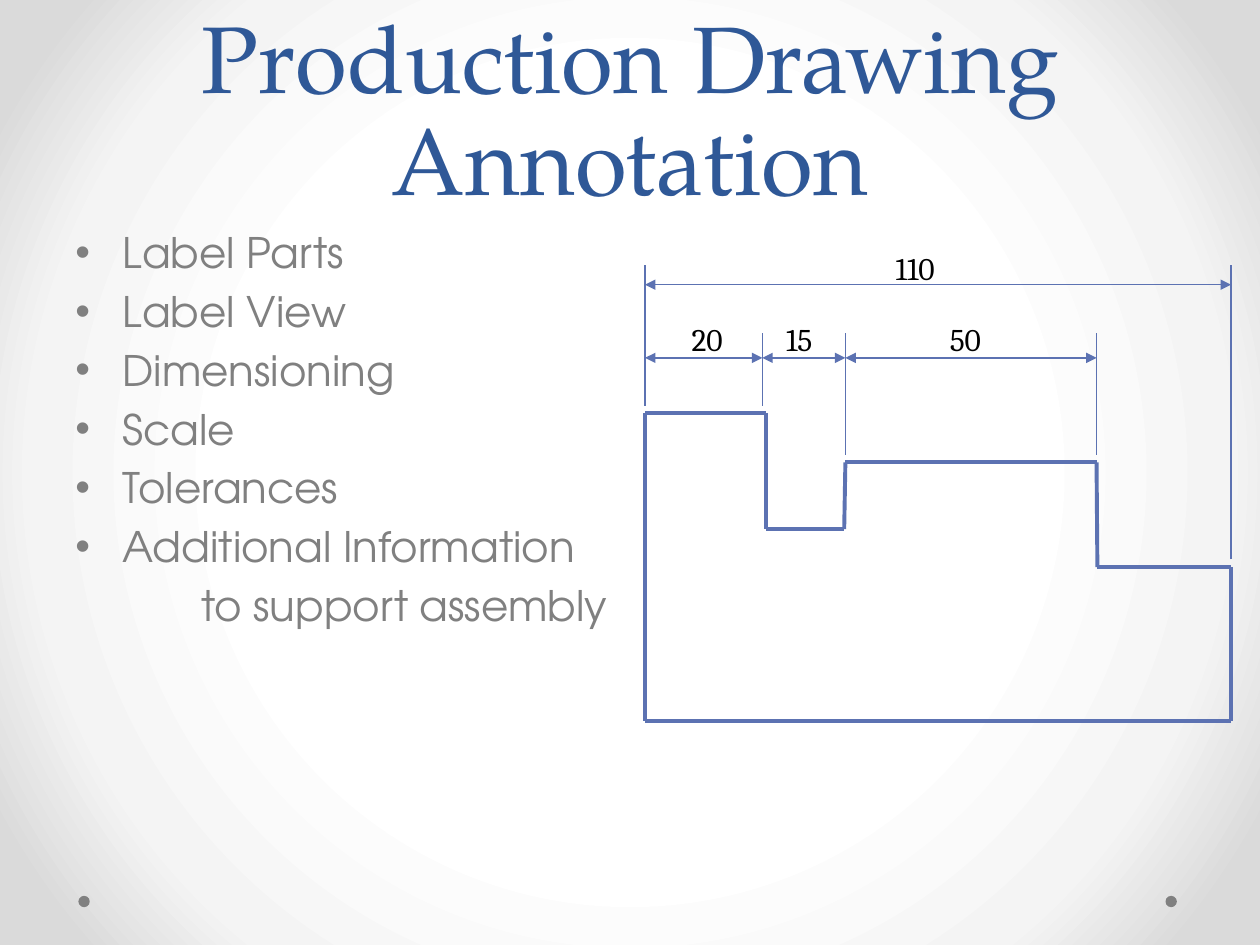
from itertools import pairwise

from pptx import Presentation
from pptx.dml.color import RGBColor
from pptx.enum.shapes import MSO_CONNECTOR as Connector, MSO_SHAPE as Preset
from pptx.enum.text import MSO_ANCHOR as Anchor, PP_ALIGN as Align
from pptx.oxml import parse_xml
from pptx.oxml.ns import nsdecls, qn
from pptx.util import Pt

COLORS = {
    "title": "2F5897",
    "body": "808080",
    "drawing": "5C72B2",
    "label": "000000",
}
BACKDROP = {50: "FFFFFF", 76: "F4F4F4", 92: "DADADA"}
FONTS = {
    "title": {"name": "TeX Gyre Pagella", "size": Pt(54)},
    "body": {"name": "TeX Gyre Adventor", "size": Pt(24)},
    "label": {"name": "Cambria", "size": Pt(18)},
}
PARAGRAPHS = {
    "title": {"alignment": Align.CENTER, "line_spacing": Pt(58)},
    "body": {"alignment": Align.LEFT, "space_before": Pt(4.8)},
    "label": {"alignment": Align.LEFT},
}
ITEMS = [
    "Label Parts", "Label View", "Dimensioning",
    "Scale", "Tolerances", "Additional Information",
]

LEFT, SLOT_LEFT, SLOT_RIGHT, STEP, RIGHT = 368.6, 435.6, 483.1, 626.6, 703.4
TOP, SHOULDER, SLOT_FLOOR, LEDGE, BOTTOM = 236.2, 264.2, 302.4, 324, 411.8
OUTLINE = [
    (LEFT, TOP), (437.8, TOP), (437.8, SLOT_FLOOR), (482.4, SLOT_FLOOR),
    (SLOT_RIGHT, SHOULDER), (STEP, SHOULDER), (627.1, LEDGE),
    (RIGHT, LEDGE), (RIGHT, BOTTOM), (LEFT, BOTTOM), (LEFT, TOP),
]
EXTENSIONS = [
    (LEFT, TOP, 151.2), (SLOT_LEFT, TOP, 190.1), (SLOT_RIGHT, SHOULDER, 190.1),
    (STEP, SHOULDER, 190.1), (RIGHT, LEDGE, 151.2),
]
EXTENSION_GAP = 4.3
DIMENSIONS = [
    ("20", LEFT, SLOT_LEFT, 204.5, (388.1, 179.3, 43.2, 23.8)),
    ("15", SLOT_LEFT, SLOT_RIGHT, 204.5, (442.1, 179.3, 43.2, 23.8)),
    ("50", SLOT_RIGHT, STEP, 204.5, (535.7, 179.3, 43.2, 23.8)),
    ("110", LEFT, RIGHT, 162.7, (504.7, 139, 56.9, 28.8)),
]


def apply(target, values):
    for name, value in values.items():
        setattr(target, name, value)


class Sketch:
    def __init__(self, slide):
        self.slide = slide

    def color(self, name):
        return RGBColor.from_string(COLORS[name])

    def background(self):
        stops = "".join(
            f'<a:gs pos="{position * 1000}"><a:srgbClr val="{value}"/></a:gs>'
            for position, value in BACKDROP.items()
        )
        background = parse_xml(
            f'<p:bg {nsdecls("p", "a")}><p:bgPr><a:gradFill rotWithShape="1">'
            f'<a:gsLst>{stops}</a:gsLst><a:path path="circle">'
            '<a:fillToRect l="50000" t="50000" r="50000" b="50000"/></a:path>'
            '</a:gradFill><a:effectLst/></p:bgPr></p:bg>'
        )
        self.slide.element.cSld.insert(0, background)

    def dot(self, left, top, size):
        shape = self.slide.shapes.add_shape(
            Preset.OVAL, Pt(left), Pt(top), Pt(size), Pt(size)
        )
        shape.shadow.inherit = False
        shape.fill.solid()
        shape.fill.fore_color.rgb = self.color("body")
        shape.line.fill.background()

    def text(self, lines, box, style, anchor=Anchor.TOP):
        shape = self.slide.shapes.add_textbox(*map(Pt, box))
        frame = shape.text_frame
        apply(frame, {"word_wrap": True, "vertical_anchor": anchor})
        for index, line in enumerate(lines):
            paragraph = frame.add_paragraph() if index else frame.paragraphs[0]
            paragraph.text = line
            apply(paragraph, PARAGRAPHS[style])
            apply(paragraph.font, FONTS[style])
            for run in paragraph.runs:
                apply(run.font, FONTS[style])
                run.font.color.rgb = self.color(style)
        return frame.paragraphs

    def indent(self, paragraph, margin, first=0, bullet=None):
        properties = paragraph._p.get_or_add_pPr()
        properties.set("marL", str(Pt(margin)))
        properties.set("indent", str(Pt(first)))
        if bullet:
            for tag, name, value in (
                ("buFont", "typeface", "Arial"), ("buChar", "char", bullet)
            ):
                properties.append(
                    parse_xml(f'<a:{tag} {nsdecls("a")} {name}="{value}"/>')
                )

    def line(self, start, end, width, arrows=False):
        connector = self.slide.shapes.add_connector(
            Connector.STRAIGHT, *map(Pt, (*start, *end))
        )
        connector.line.width = Pt(width)
        connector.line.color.rgb = self.color("drawing")
        if arrows:
            stroke = connector.line._get_or_add_ln()
            for tag in ("headEnd", "tailEnd"):
                stroke.append(
                    parse_xml(f'<a:{tag} {nsdecls("a")} type="triangle"/>')
                )
        properties = connector.element.find(qn("p:spPr"))
        properties.append(parse_xml(f'<a:effectLst {nsdecls("a")}/>'))


def main():
    presentation = Presentation()
    apply(presentation, {"slide_width": Pt(720), "slide_height": Pt(540)})
    sketch = Sketch(presentation.slides.add_slide(presentation.slide_layouts[6]))
    sketch.background()
    for left in (666, 44.8):
        sketch.dot(left, 511.9, 6.5)

    sketch.text(
        ["Production Drawing\vAnnotation"], (36, 0, 648, 126), "title", Anchor.BOTTOM
    )
    *items, continuation = sketch.text(
        [*ITEMS, "to support assembly"], (36, 126, 648, 356.4), "body"
    )
    for item in items:
        sketch.indent(item, 27, -27, "•")
    sketch.indent(continuation, 72)

    for start, end in pairwise(OUTLINE):
        sketch.line(start, end, 2.25)
    for x, edge, top in EXTENSIONS:
        sketch.line((x, edge - EXTENSION_GAP), (x, top), 0.75)
    for label, start, end, y, box in DIMENSIONS:
        sketch.line((start, y), (end, y), 0.75, arrows=True)
        sketch.text([label], box, "label")

    presentation.save("out.pptx")


if __name__ == "__main__":
    main()
